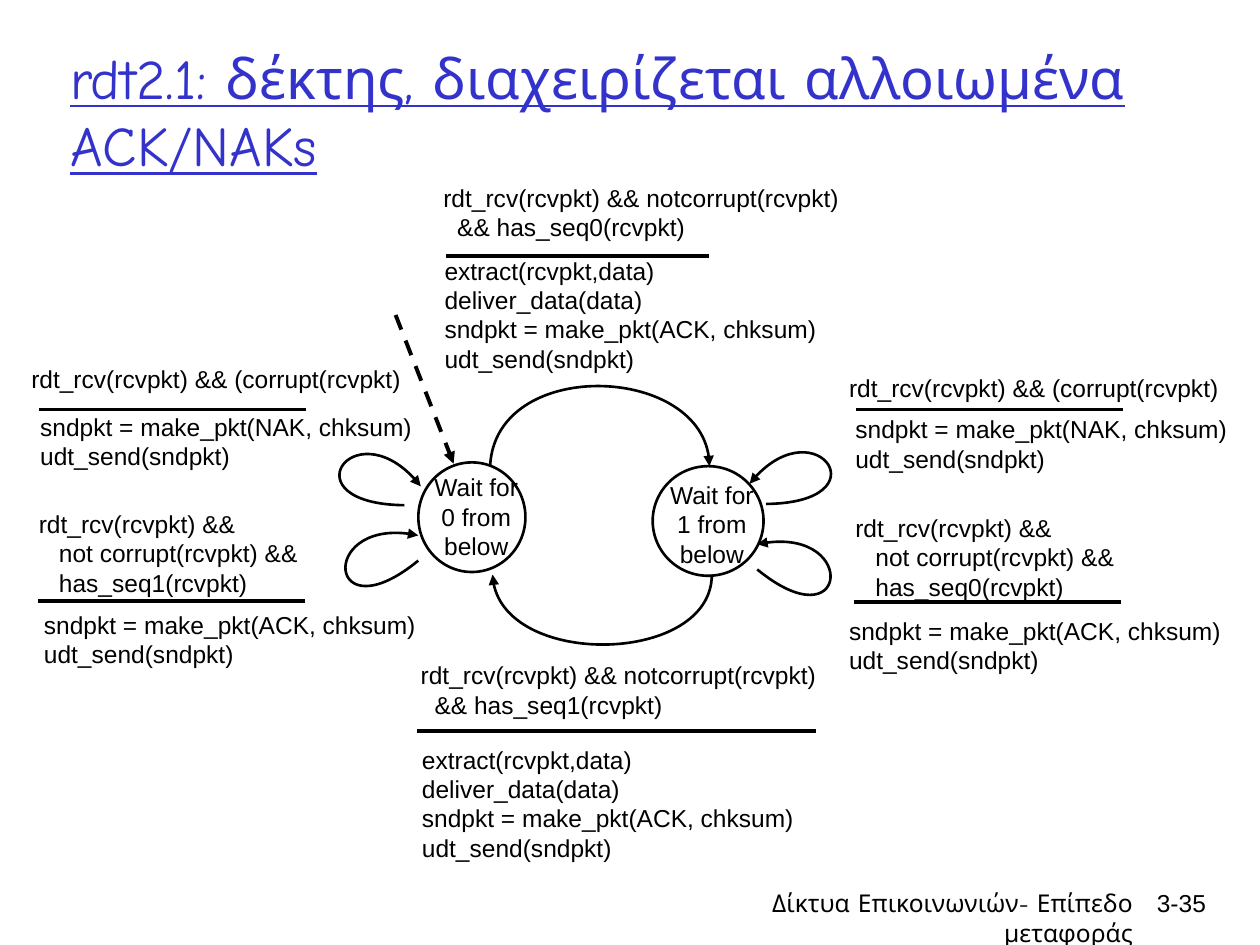
from lxml import etree
from pptx import Presentation
from pptx.dml.color import RGBColor
from pptx.enum.dml import MSO_LINE_DASH_STYLE as Dash
from pptx.enum.shapes import MSO_CONNECTOR as Connector, MSO_SHAPE as Shape
from pptx.enum.text import MSO_ANCHOR as Anchor, PP_ALIGN as Align
from pptx.oxml.ns import qn
from pptx.util import Inches, Pt

BLACK, WHITE, BLUE = "000000", "FFFFFF", "3333CC"
SEND = "udt_send(sndpkt)"
MAKE_ACK = "sndpkt = make_pkt(ACK, chksum)"
MAKE_NAK = "sndpkt = make_pkt(NAK, chksum)"
DELIVER = ["extract(rcvpkt,data)", "deliver_data(data)", MAKE_ACK, SEND]
CORRUPT = ["rdt_rcv(rcvpkt) && (corrupt(rcvpkt)"]


def accepted(seq):
    """Return the guard of a transition to the other state."""
    return ["rdt_rcv(rcvpkt) && notcorrupt(rcvpkt)", f"&& has_seq{seq}(rcvpkt)"]


def duplicate(seq):
    """Return the guard of a loop on a repeated packet."""
    return ["rdt_rcv(rcvpkt) &&", "not corrupt(rcvpkt) &&", f"has_seq{seq}(rcvpkt)"]


# guard lines, indent, guard box, rule (left, top, width), action lines, action box
TRANSITIONS = [
    (accepted(0), 0.11, (3.42, 1.4, 4.35, 0.62), (3.54, 2.03, 2.09),
     DELIVER, (3.43, 1.98, 3.8, 0.77)),
    (accepted(1), 0.11, (3.24, 5.19, 3.92, 0.62), (3.31, 5.8, 3.17),
     DELIVER, (3.25, 5.86, 4.21, 1.09)),
    (CORRUPT, 0, (0.15, 2.84, 3.14, 0.67), (0.31, 3.25, 2.12),
     [MAKE_NAK, SEND], (0.22, 3.22, 3.31, 0.45)),
    (CORRUPT, 0, (6.64, 2.91, 3.14, 0.67), (6.79, 3.25, 2.12),
     [MAKE_NAK, SEND], (6.69, 3.24, 3.31, 0.45)),
    (duplicate(1), 0.16, (0.21, 3.99, 2.87, 0.67), (0.3, 4.77, 2.12),
     [MAKE_ACK, SEND], (0.25, 4.79, 3.22, 0.45)),
    (duplicate(0), 0.16, (6.69, 4.02, 2.87, 0.67), (6.78, 4.78, 2.12),
     [MAKE_ACK, SEND], (6.64, 4.84, 3.22, 0.45)),
]

ARCS = [
    [(3.89, 3.7), (3.93, 2.84), (5.63, 2.89), (5.63, 3.7)],
    [(5.65, 4.56), (5.65, 5.27), (3.94, 5.31), (3.91, 4.56)],
    [(3.21, 4.01), (2.28, 4), (2.83, 3.21), (3.34, 3.86)],
    [(3.32, 4.45), (2.6, 5.04), (2.52, 4.08), (3.32, 4.25)],
    [(6.08, 4), (7.01, 3.99), (6.46, 3.2), (5.95, 3.84)],
    [(6.01, 4.52), (6.73, 5.11), (6.82, 4.15), (6.01, 4.32)],
]


def color(value):
    """Turn a hex string into a colour."""
    return RGBColor.from_string(value)


def add_text(page, box, lines, align=Align.LEFT, font="Arial", size=14, fill=BLACK, indent=0):
    """Write one paragraph per line, indenting all but the first."""
    frame = page.shapes.add_textbox(*map(Inches, box)).text_frame
    frame.word_wrap = True
    frame.text = "\n".join(lines)
    for index, para in enumerate(frame.paragraphs):
        para.alignment = align
        if index and indent:
            para._p.get_or_add_pPr().set("marL", str(Inches(indent)))
        for span in para.runs:
            span.font.name = font
            span.font.size = Pt(size)
            span.font.color.rgb = color(fill)
    return frame


def add_arrowhead(shape):
    """Put a triangle at the end of a line."""
    etree.SubElement(shape.line._get_or_add_ln(), qn("a:tailEnd"), type="triangle")


def add_line(page, start, end):
    """Draw a heavy straight line."""
    line = page.shapes.add_connector(Connector.STRAIGHT, *map(Inches, start + end))
    line.line.color.rgb = color(BLACK)
    line.line.width = Pt(2.25)
    etree.SubElement(line._element.spPr, qn("a:effectLst"))
    return line


def add_arc(page, points):
    """Draw a cubic curve with an arrowhead from start, two controls and end."""
    start, *others = [tuple(map(Inches, point)) for point in points]
    builder = page.shapes.build_freeform(*start, scale=1.0)
    builder.add_line_segments(others, close=False)
    arc = builder.convert_to_shape()
    segments = arc._element.xpath(".//a:lnTo")
    curve = etree.Element(qn("a:cubicBezTo"))
    segments[0].addprevious(curve)
    for segment in segments:
        curve.append(segment[0])
        segment.getparent().remove(segment)
    arc.shadow.inherit = False
    arc.fill.background()
    arc.line.color.rgb = color(BLACK)
    arc.line.width = Pt(1.5)
    add_arrowhead(arc)


def add_state(page, box, text_box, number):
    """Draw a state circle with its caption."""
    circle = page.shapes.add_shape(Shape.OVAL, *map(Inches, box))
    circle.shadow.inherit = False
    circle.fill.solid()
    circle.fill.fore_color.rgb = color(WHITE)
    circle.line.color.rgb = color(BLACK)
    circle.line.width = Pt(1.5)
    add_text(page, text_box, ["Wait for", f"{number} from below"], Align.CENTER)


def add_transition(page, guard, indent, guard_box, rule, actions, action_box):
    """Write a guard above a rule and its actions below."""
    left, top, width = rule
    add_text(page, guard_box, guard, indent=indent)
    add_line(page, (left, top), (left + width, top))
    add_text(page, action_box, actions)


def add_title(page, box):
    """Write the underlined title."""
    frame = add_text(page, box, ["rdt2.1: δέκτης, διαχειρίζεται αλλοιωμένα ACK/NAKs"],
                     font="Comic Neue", size=32, fill=BLUE)
    frame.vertical_anchor = Anchor.MIDDLE
    frame.paragraphs[0].runs[0].font.underline = True


def add_footer(page, box, number_box):
    """Write the course name and the page number."""
    add_text(page, box, ["Δίκτυα Επικοινωνιών- Επίπεδο μεταφοράς"], Align.RIGHT, "Comic Neue")
    add_text(page, number_box, ["3-35"], Align.RIGHT)


def main():
    """Build the receiver state machine."""
    deck = Presentation()
    deck.slide_width, deck.slide_height = Inches(10), Inches(7.5)
    page = deck.slides.add_slide(deck.slide_layouts[6])
    add_footer(page, (5.92, 7, 3.17, 0.5), (8.93, 7, 0.74, 0.5))
    add_title(page, (0.46, 0.25, 9.1, 1.25))
    add_state(page, (3.32, 3.67, 0.85, 0.87), (3.34, 3.7, 0.88, 0.67), 0)
    add_state(page, (5.18, 3.7, 0.88, 0.87), (5.21, 3.76, 0.88, 0.67), 1)
    entry = add_line(page, (3.14, 2.5), (3.6, 3.68))
    entry.line.dash_style = Dash.DASH
    add_arrowhead(entry)
    for points in ARCS:
        add_arc(page, points)
    for transition in TRANSITIONS:
        add_transition(page, *transition)
    deck.save("out.pptx")


if __name__ == "__main__":
    main()
